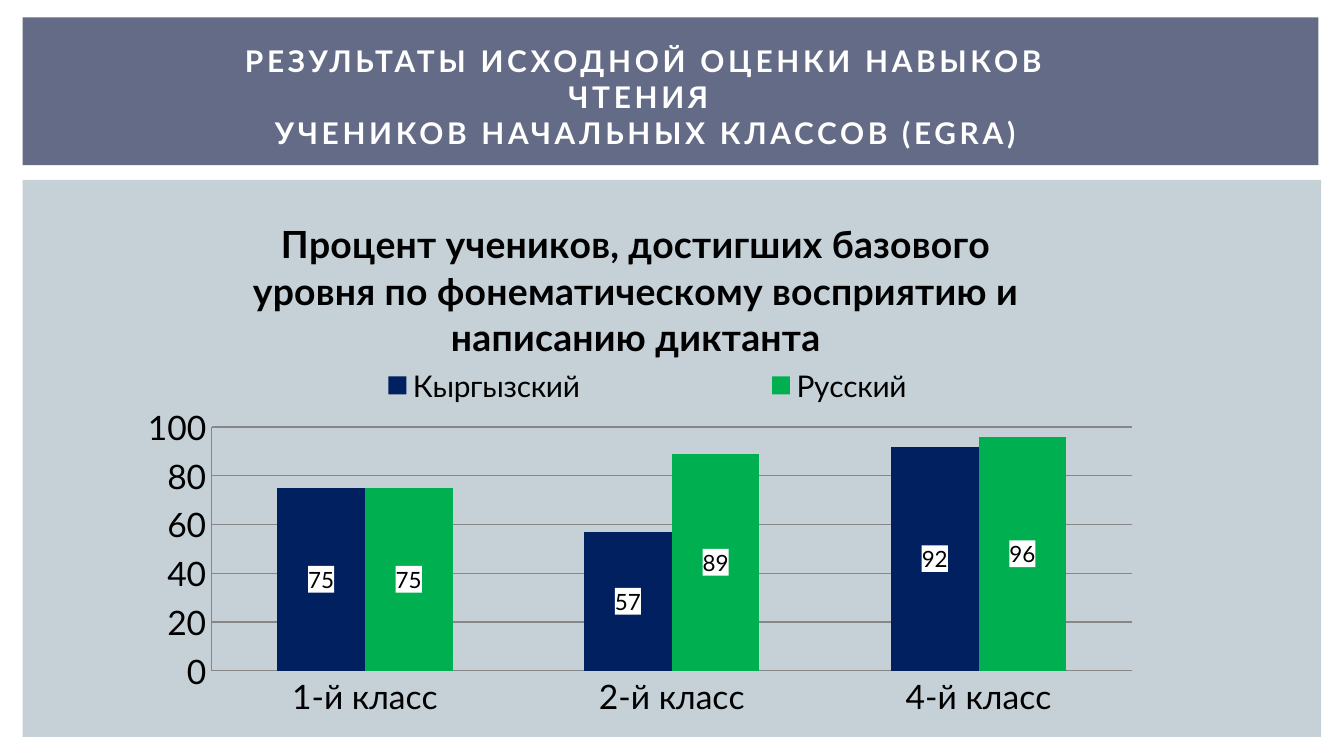
from lxml import etree
from pptx import Presentation
from pptx import util as u
from pptx.chart.data import CategoryChartData
from pptx.dml.color import RGBColor
from pptx.enum import chart as ch, shapes, text
from pptx.oxml import parse_xml
from pptx.oxml.ns import qn

HEADING = ["РЕЗУЛЬТАТЫ ИСХОДНОЙ ОЦЕНКИ НАВЫКОВ ЧТЕНИЯ ",
           "УЧЕНИКОВ НАЧАЛЬНЫХ КЛАССОВ (EGRA)"]
CHART_TITLE = ("Процент учеников, достигших базового уровня по "
               "фонематическому восприятию и написанию диктанта")
GRADES = ["1-й класс", "2-й класс", "4-й класс"]
SERIES = [("Кыргызский", "navy", (75, 57, 92)),
          ("Русский", "green", (75, 89, 96))]
COLOURS = {"panel": "C5D1D7", "band": "646B86", "white": "FFFFFF", "black": "000000",
           "navy": "002060", "green": "00B050", "grid": "878787"}
FONT = "Lato"

# Left, top, width, height in centimetres
PANELS = [("panel", (0.43, 3.4, 24.54, 10.52)), ("band", (0.43, 0.33, 24.49, 2.79))]
TITLE_BOX = (3.71, 0.74, 16.99, 2.18)
CHART_BOX = (2.31, 3.35, 19.86, 10.21)

# Fractions of the chart: x, y, width, height
PLOT_AREA = (0.085, 0.462, 0.876, 0.451)
LEGEND_AREA = (0.08, 0.34, 0.84, 0.09)
TITLE_CORNER = (0.118, 0.06)


def colour(name):
    return RGBColor.from_string(COLOURS[name])


def lengths(box):
    return [u.Cm(value) for value in box]


def paint(fill, name):
    fill.solid()
    fill.fore_color.rgb = colour(name)


def style(font, size, name="black", bold=False):
    for key, value in {"name": FONT, "size": u.Pt(size), "bold": bold}.items():
        setattr(font, key, value)
    font.color.rgb = colour(name)


def place(element, area, following, inner=False):
    """Give a chart part a manual layout, put before the tags that must follow it."""
    for old in element.findall(qn("c:layout")):
        element.remove(old)
    layout = parse_xml('<c:layout xmlns:c="http://schemas.openxmlformats.org/'
                       'drawingml/2006/chart"><c:manualLayout/></c:layout>')
    values = [("layoutTarget", "inner")] if inner else []
    values += [("xMode", "edge"), ("yMode", "edge")] + list(zip("xywh", area))
    for tag, value in values:
        etree.SubElement(layout[0], qn("c:" + tag)).set("val", str(value))
    tags = [qn("c:" + tag) for tag in following]
    target = next((child for child in element if child.tag in tags), None)
    if target is None:
        element.append(layout)
    else:
        target.addprevious(layout)


def add_panels(page):
    for name, box in PANELS:
        panel = page.shapes.add_shape(shapes.MSO_SHAPE.RECTANGLE, *lengths(box))
        panel.shadow.inherit = False
        paint(panel.fill, name)
        panel.line.fill.background()


def add_heading(page):
    title = page.shapes.title
    title.left, title.top, title.width, title.height = lengths(TITLE_BOX)
    title._element.getparent().append(title._element)  # in front of the panels
    frame = title.text_frame
    for key, value in {"word_wrap": True, "auto_size": text.MSO_AUTO_SIZE.NONE,
                       "vertical_anchor": text.MSO_ANCHOR.MIDDLE}.items():
        setattr(frame, key, value)
    para = frame.paragraphs[0]
    para.alignment = text.PP_ALIGN.CENTER
    for index, line in enumerate(HEADING):
        if index:
            para.add_line_break()
        span = para.add_run()
        span.text = line
        style(span.font, 16, "white", True)
        span.font._element.set("spc", "200")


def add_results_chart(page):
    data = CategoryChartData(number_format="0")
    data.categories = GRADES
    for name, _, values in SERIES:
        data.add_series(name, values)
    chart = page.shapes.add_chart(ch.XL_CHART_TYPE.COLUMN_CLUSTERED,
                                  *lengths(CHART_BOX), data).chart
    style(chart.font, 18)

    chart.has_title = True
    frame = chart.chart_title.text_frame
    frame.text = CHART_TITLE
    style(frame.paragraphs[0].runs[0].font, 20, bold=True)
    chart.chart_title.include_in_layout = False
    place(chart.chart_title._element, TITLE_CORNER, ["overlay", "spPr", "txPr"])

    chart.has_legend = True
    legend = chart.legend
    legend.position = ch.XL_LEGEND_POSITION.RIGHT
    legend.include_in_layout = False
    style(legend.font, 16)
    place(legend._element, LEGEND_AREA, ["overlay", "spPr", "txPr"])

    plot = chart.plots[0]
    plot.gap_width, plot.overlap, plot.vary_by_categories = 150, 0, False
    place(plot._element.getparent(), PLOT_AREA, ["barChart"], inner=True)
    for series, (_, name, _) in zip(plot.series, SERIES):
        paint(series.format.fill, name)
        labels = series.data_labels
        for key, value in {"show_value": True, "number_format": "0",
                           "number_format_is_linked": False,
                           "position": ch.XL_LABEL_POSITION.CENTER}.items():
            setattr(labels, key, value)
        style(labels.font, 12)
        background = parse_xml(
            '<c:spPr xmlns:c="http://schemas.openxmlformats.org/drawingml/2006/chart" '
            'xmlns:a="http://schemas.openxmlformats.org/drawingml/2006/main"><a:solidFill>'
            f'<a:srgbClr val="{COLOURS["white"]}"/></a:solidFill></c:spPr>')
        labels._element.find(qn("c:txPr")).addprevious(background)

    scale = chart.value_axis
    for key, value in {"minimum_scale": 0, "maximum_scale": 100, "major_unit": 20,
                       "has_major_gridlines": True}.items():
        setattr(scale, key, value)
    scale.tick_labels.number_format = "0"
    scale.tick_labels.number_format_is_linked = False
    for axis in (scale, chart.category_axis):
        axis.major_tick_mark = axis.minor_tick_mark = ch.XL_TICK_MARK.NONE
        style(axis.tick_labels.font, 18)
    for part in (scale, scale.major_gridlines, chart.category_axis):
        part.format.line.color.rgb = colour("grid")
        part.format.line.width = u.Pt(0.75)


def main():
    deck = Presentation()
    deck.slide_width, deck.slide_height = u.Cm(25.4), u.Cm(14.28)
    page = deck.slides.add_slide(deck.slide_layouts[5])
    add_panels(page)
    add_heading(page)
    add_results_chart(page)
    deck.save("out.pptx")


if __name__ == "__main__":
    main()
